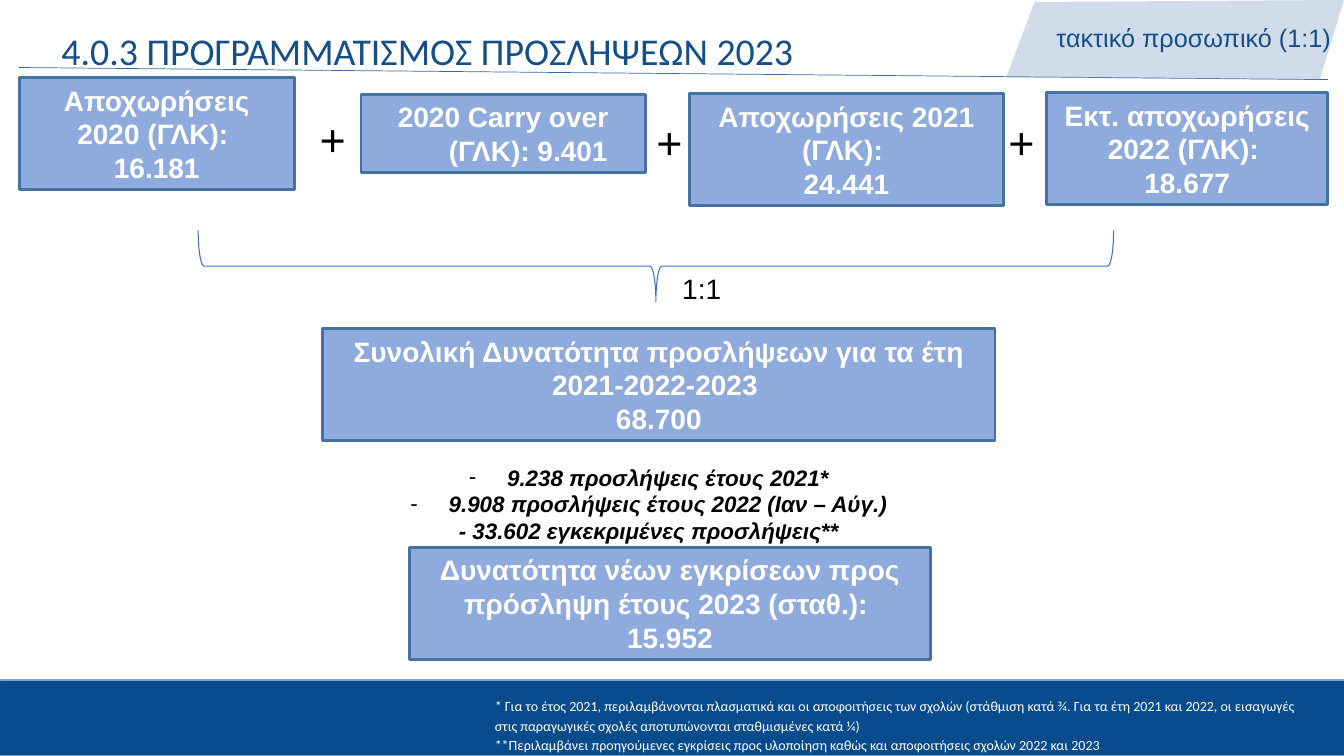
import pptx
import pptx.util
import pptx.dml.color
import pptx.enum.dml
import pptx.enum.shapes
import pptx.enum.text
import pptx.oxml
import pptx.oxml.ns
import lxml.etree
from dataclasses import dataclass

PX = 9144  # 100 px to the inch
Pt = pptx.util.Pt
ALIGN = pptx.enum.text.PP_ALIGN
FIT = pptx.enum.text.MSO_AUTO_SIZE
KIND = pptx.enum.shapes.MSO_SHAPE
qn = pptx.oxml.ns.qn


@dataclass(frozen=True)
class Theme:
    sans: str = "Arial"
    head: str = "Calibri"
    navy: str = "144F89"
    band: str = "084C8D"
    rim: str = "6F9DD0"
    strip: str = "86A3CD"
    rule: str = "376A9F"
    tab: str = "87A4CB"
    box: str = "8FAADC"
    edge: str = "43739E"
    brace: str = "3F6FC3"
    white: str = "FFFFFF"
    black: str = "000000"
    title: int = 27
    plus: int = 32
    main: int = 20
    tag: int = 18
    list: int = 16
    note: int = 10


T = Theme()


def px(*nums):
    return [pptx.util.Emu(n * PX) for n in nums]


def rgb(code):
    return pptx.dml.color.RGBColor.from_string(code)


def place(shape, *area):
    shape.left, shape.top, shape.width, shape.height = px(*area)


def paint(shape, fill=None, line=None, width=1):
    shape.shadow.inherit = False
    if fill:
        shape.fill.solid()
        shape.fill.fore_color.rgb = rgb(fill)
    else:
        shape.fill.background()
    if line:
        shape.line.color.rgb = rgb(line)
        shape.line.width = Pt(width)
    else:
        shape.line.fill.background()


def write(frame, lines, size, color, face=T.sans, align=ALIGN.LEFT,
          bold=False, slant=False, space=None):
    """Fill a text frame, one paragraph for each line."""
    frame.word_wrap = True
    frame.auto_size = FIT.SHAPE_TO_FIT_TEXT
    for i, line in enumerate(lines):
        para = frame.paragraphs[0] if i == 0 else frame.add_paragraph()
        para.text = line
        para.alignment = align
        para.space_before = Pt(0)
        if space:
            para.line_spacing = space
        font = para.font
        font.name, font.size = face, Pt(size)
        font.bold, font.italic = bold, slant
        font.color.rgb = rgb(color)


def indent(para, left, first=0, mark=None, **attrs):
    """Set the indent and the bullet of a paragraph."""
    props = para._p.get_or_add_pPr()
    props.set("marL", str(left * PX))
    props.set("indent", str(first * PX))
    if mark:
        item = lxml.etree.Element(qn("a:" + mark), attrs)
        props.find(qn("a:defRPr")).addprevious(item)


def label(slide, area, lines, size, color, **style):
    shape = slide.shapes.add_textbox(*px(*area))
    write(shape.text_frame, lines, size, color, **style)
    return shape


def block(slide, area, fill=None, line=None, width=1, kind=KIND.RECTANGLE):
    shape = slide.shapes.add_shape(kind, *px(*area))
    paint(shape, fill, line, width)
    return shape


def card(slide, area, text):
    shape = block(slide, area, T.box, T.edge, 2)
    shape.text_frame.vertical_anchor = pptx.enum.text.MSO_ANCHOR.MIDDLE
    write(shape.text_frame, [text], T.main, T.white,
          align=ALIGN.CENTER, bold=True)
    return shape


def rule(slide, *ends):
    line = slide.shapes.add_connector(
        pptx.enum.shapes.MSO_CONNECTOR.STRAIGHT, *px(*ends))
    line.line.color.rgb = rgb(T.rule)
    line.line.width = Pt(0.5)
    lxml.etree.SubElement(line._element.spPr, qn("a:effectLst"))


def corner(slide):
    """Draw the see-through tab at the top right, with its label."""
    pen = slide.shapes.build_freeform(1309, 79, scale=PX)
    pen.add_line_segments([(998, 77), (1026, 2), (1333, 0)], close=True)
    tab = pen.convert_to_shape()
    paint(tab, T.tab)
    color = tab._element.spPr.find(".//" + qn("a:srgbClr"))
    lxml.etree.SubElement(color, qn("a:alpha"), val="38000")
    label(slide, (1038, 17, 295, 40), ["τακτικό προσωπικό (1:1)"],
          T.tag, T.navy)


def heading(slide):
    title = slide.shapes.title
    place(title, 56, 30, 1279, 49)
    frame = title.text_frame
    write(frame, ["4.0.3 ΠΡΟΓΡΑΜΜΑΤΙΣΜΟΣ ΠΡΟΣΛΗΨΕΩΝ 2023"],
          T.title, T.navy, face=T.head, space=0.8)
    frame.margin_left, frame.margin_right = px(5, 5)
    frame.margin_top, frame.margin_bottom = px(5, 5)


def hires(slide):
    """Fill the list of hires to subtract."""
    body = slide.placeholders[1]
    place(body, 321, 455, 645, 94)
    write(body.text_frame, [
        "9.238 προσλήψεις έτους 2021*",
        "9.908 προσλήψεις έτους 2022 (Ιαν – Αύγ.)",
        "- 33.602 εγκεκριμένες προσλήψεις**",
    ], T.list, T.black, align=ALIGN.CENTER, bold=True, slant=True)
    first, second, third = body.text_frame.paragraphs
    for para in (first, second):
        indent(para, 38, -38, "buChar", char="-")
    indent(third, 0, 0, "buNone")


def footer(slide):
    block(slide, (-2, 674, 1337, 76), T.band, T.rim)
    block(slide, (1, 674, 1332, 1), T.strip, T.strip)
    notes = label(slide, (431, 685, 886, 68), [
        "* Για το έτος 2021, περιλαμβάνονται πλασματικά και οι αποφοιτήσεις "
        "των σχολών (στάθμιση κατά ¾. Για τα έτη 2021 και 2022, οι εισαγωγές "
        "στις παραγωγικές σχολές αποτυπώνονται σταθμισμένες κατά ¼)",
        "**Περιλαμβάνει προηγούμενες εγκρίσεις προς υλοποίηση καθώς και "
        "αποφοιτήσεις σχολών 2022 και 2023",
    ], T.note, T.white, face=T.head, space=1.15)
    for para in notes.text_frame.paragraphs:
        indent(para, 50)


def main():
    deck = pptx.Presentation()
    deck.slide_width, deck.slide_height = px(1333, 750)
    slide = deck.slides.add_slide(deck.slide_layouts[1])

    # Frame of the slide
    footer(slide)
    rule(slide, 19, 67, 1317, 79)
    heading(slide)
    corner(slide)

    # Terms of the sum
    card(slide, (19, 77, 273, 111), "Αποχωρήσεις 2020 (ΓΛΚ): \n16.181")
    carry = card(slide, (358, 94, 282, 77), " Carry over (ΓΛΚ): 9.401")
    indent(carry.text_frame.paragraphs[0], 50, -50, "buAutoNum",
           type="arabicPlain", startAt="2020")
    card(slide, (684, 93, 311, 111), "Αποχωρήσεις 2021 (ΓΛΚ): \n24.441")
    card(slide, (1038, 92, 279, 111),
         "Εκτ. αποχωρήσεις 2022 (ΓΛΚ): \n18.677")
    for left, top in ((291, 106), (625, 109), (974, 109)):
        label(slide, (left, top, 78, 64), ["+"], T.plus, T.black,
              align=ALIGN.CENTER)

    # Brace that gathers the terms
    brace = block(slide, (615, -190, 71, 908), None, T.brace, 0.75,
                  KIND.RIGHT_BRACE)
    brace.rotation = 90
    label(slide, (657, 264, 78, 44), ["1:1"], T.main, T.black,
          align=ALIGN.CENTER)

    # Total, hires and what remains
    card(slide, (320, 326, 667, 111),
         "Συνολική Δυνατότητα προσλήψεων για τα έτη 2021-2022-2023 \n68.700")
    hires(slide)
    card(slide, (406, 543, 517, 111),
         "Δυνατότητα νέων εγκρίσεων προς πρόσληψη έτους 2023 (σταθ.): "
         "\n15.952")

    deck.save("out.pptx")


if __name__ == "__main__":
    main()
